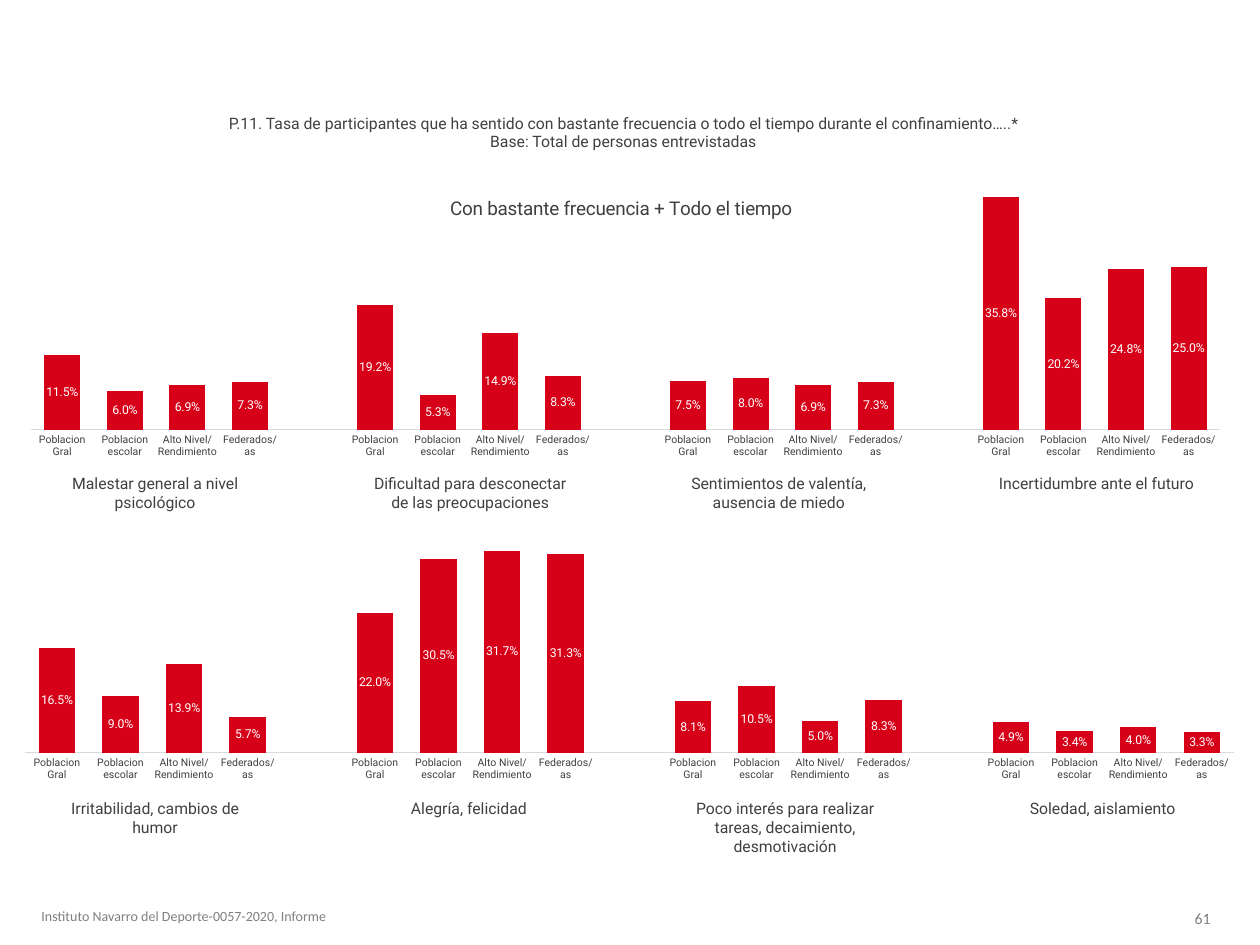
from lxml import etree
from pptx import Presentation
from pptx.chart.data import CategoryChartData
from pptx.dml.color import RGBColor
from pptx.enum.chart import XL_CHART_TYPE, XL_LABEL_POSITION, XL_TICK_MARK
from pptx.enum.shapes import MSO_SHAPE
from pptx.enum.text import MSO_ANCHOR, PP_ALIGN
from pptx.oxml.ns import qn
from pptx.util import Inches, Pt

STACKED = XL_CHART_TYPE.COLUMN_STACKED
MIDLABEL = XL_LABEL_POSITION.CENTER
NOTICK = XL_TICK_MARK.NONE
RECT = MSO_SHAPE.RECTANGLE
TOP, MIDDLE = MSO_ANCHOR.TOP, MSO_ANCHOR.MIDDLE
LEFT, CENTER = PP_ALIGN.LEFT, PP_ALIGN.CENTER
RED, DARK, GREY, RULE, WHITE = "D60019", "404040", "808080", "D9D9D9", "FFFFFF"
FORMAT = "###0.0%"

rgb = RGBColor.from_string

prs = Presentation()
prs.slide_width, prs.slide_height = Inches(10), Inches(7.5)
slide = prs.slides.add_slide(prs.slide_layouts[6])


def text(words, box, size=9, font="Roboto", color=DARK, align=CENTER,
         anchor=TOP, inset=(0.04, 0.1), fill=None, indent=0):
    area = [Inches(v) for v in box]
    if fill:
        shape = slide.shapes.add_shape(RECT, *area)
        shape.shadow.inherit = False
        shape.fill.solid()
        shape.fill.fore_color.rgb = rgb(fill)
        shape.line.fill.background()
    else:
        shape = slide.shapes.add_textbox(*area)
    frame = shape.text_frame
    frame.word_wrap = True
    frame.vertical_anchor = anchor
    frame.margin_left, frame.margin_right = [Inches(v) for v in inset]
    frame.margin_top = frame.margin_bottom = Inches(0.05)
    frame.text = words
    for para in frame.paragraphs:
        para.alignment = align
        if indent:
            para._p.get_or_add_pPr().set("marL", str(Inches(indent)))
        face = para.runs[0].font
        face.name, face.size, face.color.rgb = font, Pt(size), rgb(color)


def place(parent, index, **values):
    """Set a manual layout, in fractions of the chart area."""
    for old in parent.findall(qn("c:layout")):
        parent.remove(old)
    layout = etree.Element(qn("c:layout"))
    manual = etree.SubElement(layout, qn("c:manualLayout"))
    for key, value in values.items():
        etree.SubElement(manual, qn("c:" + key)).set("val", str(value))
    parent.insert(index, layout)


# Footer and page number
text("Instituto Navarro del Deporte-0057-2020, Informe", (0.23, 7.15, 3.19, 0.24),
     size=8, font="Calibri", color=GREY, align=LEFT, inset=(0.1, 0.1))
text("61", (9.21, 7.16, 0.67, 0.25), font="Calibri", color=GREY,
     anchor=MIDDLE, inset=(0.1, 0.1))

# Question
text("P.11. Tasa de participantes que ha sentido con bastante frecuencia o todo "
     "el tiempo durante el confinamiento…..*\n"
     "Base: Total de personas entrevistadas", (0.44, 0.85, 9.07, 0.4))

# Charts: four groups of four bars, with an empty slot between groups
groups = ["Poblacion Gral", "Poblacion escolar", "Alto Nivel/ Rendimiento",
          "Federados/as"]
cats = (groups + [""]) * 3 + groups
charts = [
    ((0, 1.31, 9.85, 2.46), (0.025, 0.016, 0.958, 0.838), 0.4,
     "Con bastante frecuencia + Todo el tiempo",
     [0.115, 0.06, 0.069, 0.073, None, 0.192, 0.053, 0.149, 0.083, None,
      0.075, 0.08, 0.069, 0.073, None, 0.358, 0.202, 0.248, 0.25]),
    ((0.09, 3.73, 9.93, 2.63), (0.011, 0.182, 0.966, 0.672), 0.35, None,
     [0.165, 0.09, 0.139, 0.057, None, 0.22, 0.305, 0.317, 0.313, None,
      0.081, 0.105, 0.05, 0.083, None, 0.049, 0.034, 0.04, 0.033]),
]
for box, (x, y, w, h), peak, title, values in charts:
    data = CategoryChartData(number_format=FORMAT)
    data.categories = cats
    data.add_series("Series 1", values)
    area = [Inches(v) for v in box]
    chart = slide.shapes.add_chart(STACKED, *area, data).chart
    chart.has_legend = False
    chart.font.name, chart.font.size = "Roboto", Pt(9)
    chart.font.color.rgb = rgb(DARK)
    place(chart._chartSpace.chart.plotArea, 0, layoutTarget="inner",
          xMode="edge", yMode="edge", x=x, y=y, w=w, h=h)

    chart.has_title = bool(title)
    if title:
        head = chart.chart_title
        head.include_in_layout = False
        head.text_frame.text = title
        face = head.text_frame.paragraphs[0].runs[0].font
        face.name, face.size, face.bold = "Roboto", Pt(10.8), False
        face.color.rgb = rgb(DARK)
        place(head._element, 1, xMode="edge", yMode="edge", x=0.36, y=0.09)

    axis = chart.category_axis
    axis.major_tick_mark = axis.minor_tick_mark = NOTICK
    axis.format.line.color.rgb = rgb(RULE)
    axis.format.line.width = Pt(0.75)
    axis.tick_labels.font.name = "Roboto"
    axis.tick_labels.font.size = Pt(6)
    axis.tick_labels.font.color.rgb = rgb(DARK)
    scale = chart.value_axis
    scale.minimum_scale, scale.maximum_scale = 0, peak
    scale.has_major_gridlines = False
    scale.visible = False

    plot = chart.plots[0]
    plot.gap_width, plot.overlap = 74, 100
    plot.vary_by_categories = False
    bars = plot.series[0]
    bars.format.fill.solid()
    bars.format.fill.fore_color.rgb = rgb(RED)
    labels = bars.data_labels
    labels.show_value = True
    labels.position = MIDLABEL
    labels.number_format, labels.number_format_is_linked = FORMAT, False
    labels.font.name, labels.font.size = "Roboto", Pt(7)
    labels.font.color.rgb = rgb(WHITE)

# Captions under each group of bars: left, height, words
rows = [
    (3.71, [(0.3, 0.4, "Malestar general a nivel psicológico"),
            (2.8, 0.4, "Dificultad para desconectar de las preocupaciones"),
            (5.25, 0.4, "Sentimientos de valentía, ausencia de miedo"),
            (7.77, 0.25, "Incertidumbre ante el futuro")]),
    (6.29, [(0.3, 0.4, "Irritabilidad, cambios de humor"),
            (2.79, 0.25, "Alegría, felicidad"),
            (5.3, 0.56, "Poco interés para realizar tareas, decaimiento, desmotivación"),
            (7.82, 0.25, "Soledad, aislamiento")]),
]
for top, row in rows:
    for left, height, words in row:
        text(words, (left, top, 1.86, height), fill=WHITE, indent=0.06)

prs.save("out.pptx")
